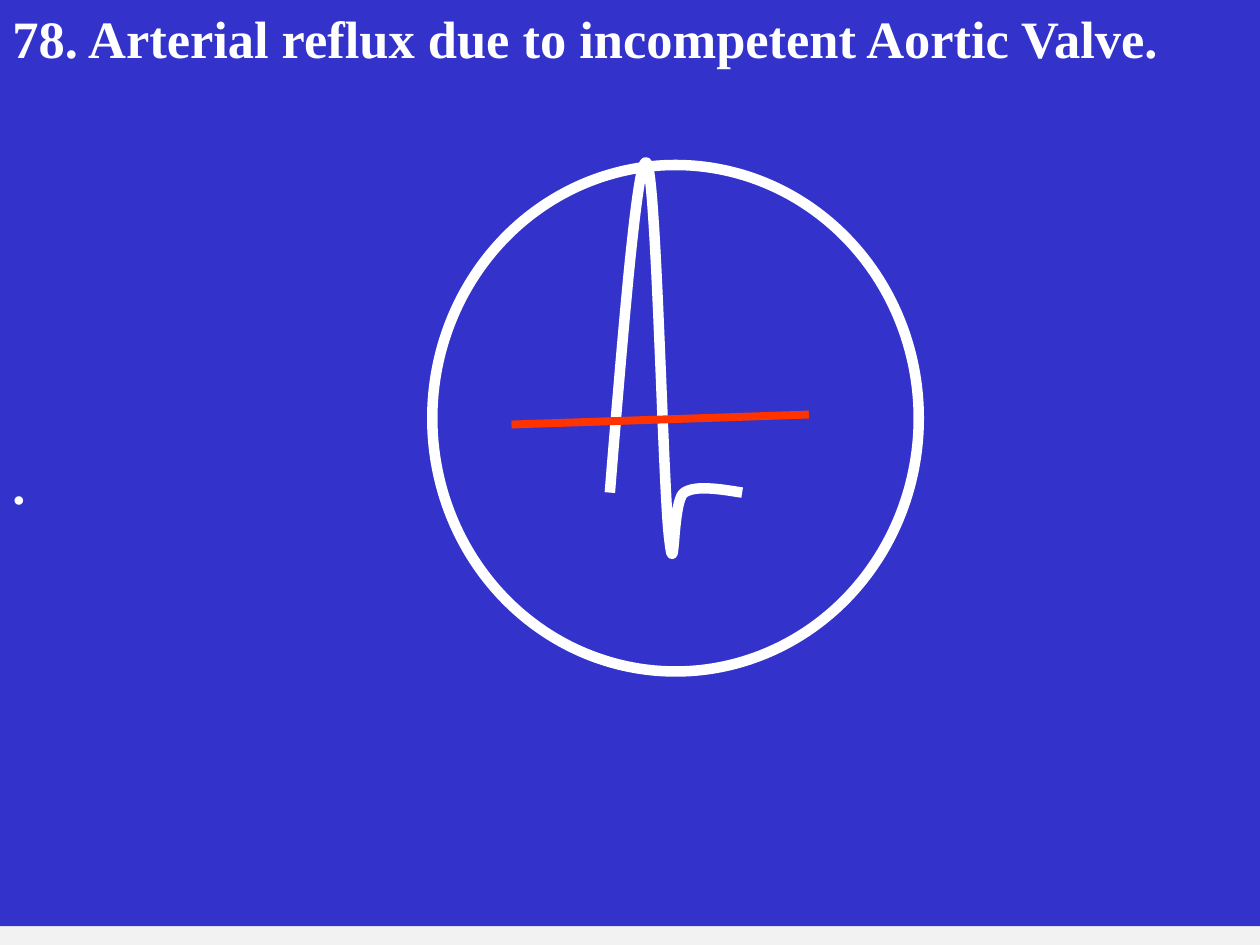
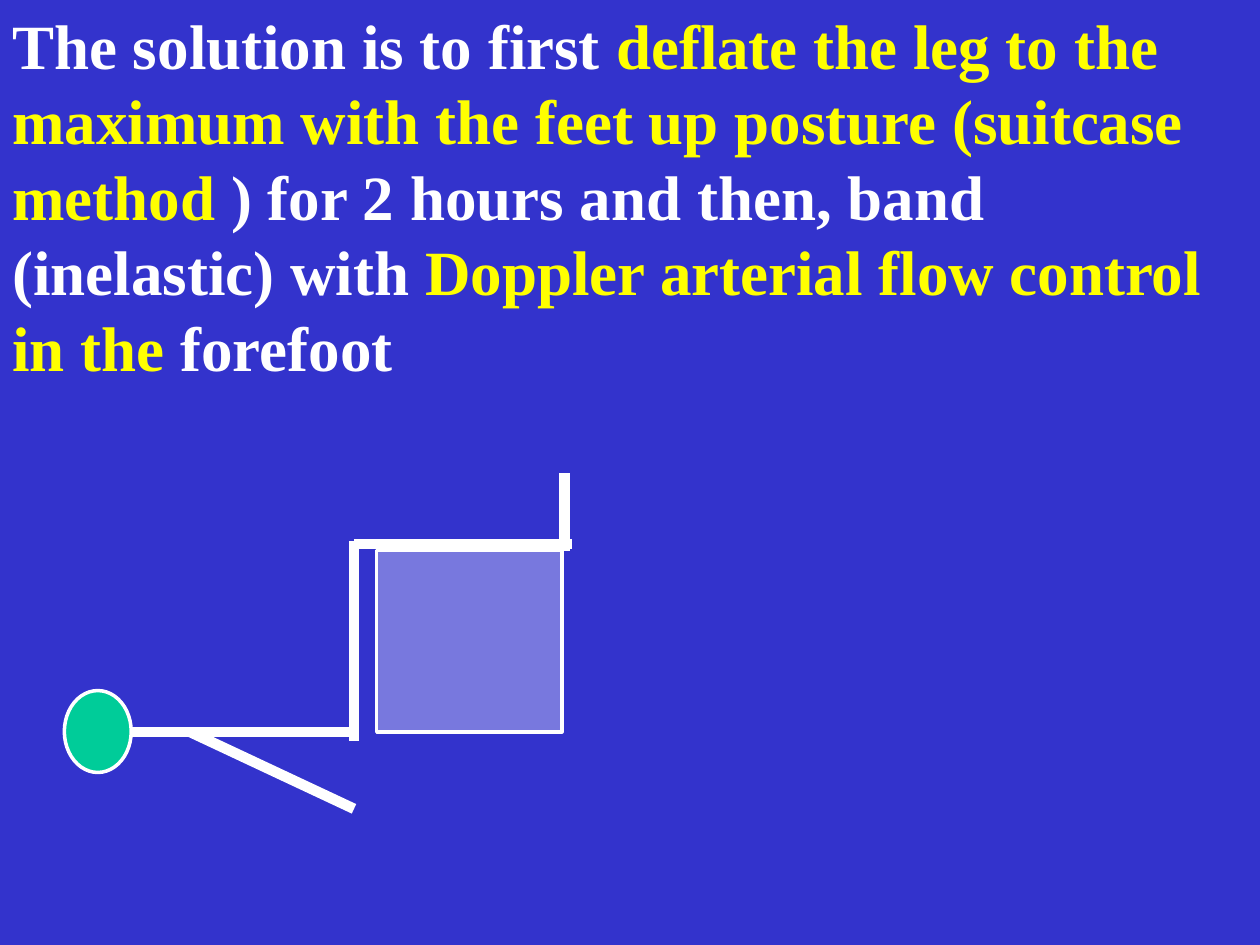
from dataclasses import dataclass

from lxml.etree import SubElement
from pptx import Presentation
from pptx.dml.color import RGBColor
from pptx.enum.shapes import MSO_CONNECTOR, MSO_SHAPE
from pptx.enum.text import MSO_ANCHOR, PP_ALIGN
from pptx.oxml.ns import qn
from pptx.util import Pt


@dataclass(frozen=True)
class Theme:
    """Colours, type and line widths shared by the slides."""

    page: str = "F2F2F2"
    panel: str = "3333CC"
    white: str = "FFFFFF"
    yellow: str = "FFFF00"
    red: str = "FF3300"
    head: str = "00CC99"
    seat: str = "7878DE"
    font: str = "Times New Roman"
    heading_size: int = 30
    body_size: int = 36
    leading: float = 1.2
    thick: float = 6
    medium: float = 4.5
    thin: float = 2


THEME = Theme()
WIDTH, HEIGHT = 720, 540


def rgb(colour):
    """Turn a hex string into a colour."""
    return RGBColor.from_string(colour)


def style_shape(shape, fill=None, line=None, width=THEME.thin):
    """Set the fill and outline of a shape and drop its shadow."""
    shape.shadow.inherit = False
    if fill:
        shape.fill.solid()
        shape.fill.fore_color.rgb = rgb(fill)
    else:
        shape.fill.background()
    if line:
        shape.line.color.rgb = rgb(line)
        shape.line.width = Pt(width)
    else:
        shape.line.fill.background()


def add_figure(slide, kind, box, **style):
    """Add a styled preset shape in a box of left, top, width, height."""
    figure = slide.shapes.add_shape(kind, *map(Pt, box))
    style_shape(figure, **style)
    return figure


def add_stroke(slide, start, end, colour=THEME.white, width=THEME.thick):
    """Add a straight line between two points."""
    stroke = slide.shapes.add_connector(
        MSO_CONNECTOR.STRAIGHT, *map(Pt, (*start, *end)))
    stroke.line.color.rgb = rgb(colour)
    stroke.line.width = Pt(width)
    SubElement(stroke._element.spPr, qn("a:effectLst"))


def add_curve(slide, start, segments, steps=24):
    """Draw a chain of cubic curves as one open outline."""
    points, origin = [], start
    for first, second, end in segments:
        for step in range(1, steps + 1):
            t = step / steps
            u = 1 - t
            points.append(tuple(
                Pt(u**3 * a + 3 * u * u * t * b + 3 * u * t * t * c + t**3 * d)
                for a, b, c, d in zip(origin, first, second, end)))
        origin = end
    builder = slide.shapes.build_freeform(*map(Pt, start))
    builder.add_line_segments(points, close=False)
    style_shape(builder.convert_to_shape(), line=THEME.white, width=THEME.thick)


def add_panel(slide, height, size, paragraphs):
    """Add the blue panel with paragraphs of (space before, runs)."""
    panel = add_figure(slide, MSO_SHAPE.RECTANGLE, (0, 0, WIDTH, height),
                       fill=THEME.panel)
    frame = panel.text_frame
    frame.word_wrap = True
    frame.vertical_anchor = MSO_ANCHOR.TOP
    for index, (space, runs) in enumerate(paragraphs):
        paragraph = frame.add_paragraph() if index else frame.paragraphs[0]
        paragraph.alignment = PP_ALIGN.LEFT
        paragraph.line_spacing = Pt(size * THEME.leading)
        paragraph.space_before = Pt(space)
        for text, colour in runs:
            run = paragraph.add_run()
            run.text = text
            run.font.name = THEME.font
            run.font.size = Pt(size)
            run.font.bold = True
            run.font.color.rgb = rgb(colour)


def add_page(deck):
    """Add a blank slide with the shared background."""
    slide = deck.slides.add_slide(deck.slide_layouts[6])
    slide.background.fill.solid()
    slide.background.fill.fore_color.rgb = rgb(THEME.page)
    return slide


def build_reflux(deck):
    """Build the arterial reflux slide with its Doppler trace."""
    slide = add_page(deck)
    add_panel(slide, 529.2, THEME.heading_size, [
        (0, [("78. Arterial reflux due to incompetent Aortic Valve.",
              THEME.white)]),
        (219, [(".", THEME.white)]),
    ])
    add_curve(slide, (348.5, 281.5), [
        ((356.4, 185), (364.3, 88.6), (369.4, 92.9)),
        ((375.1, 97.2), (378.7, 275), (382.3, 306.7)),
        ((385.9, 337.7), (383.8, 285.8), (391, 281.5)),
        ((397.4, 277.2), (411.1, 279.4), (424.1, 281.5)),
    ])
    add_stroke(slide, (292.3, 242.6), (462.2, 236.9), THEME.red, THEME.medium)
    add_figure(slide, MSO_SHAPE.OVAL, (247, 94.3, 278, 289.4),
               line=THEME.white, width=THEME.thick)


def build_posture(deck):
    """Build the feet up posture slide with its stick figure."""
    slide = add_page(deck)
    add_panel(slide, HEIGHT, THEME.body_size, [(0, [
        ("The solution is to first ", THEME.white),
        ("deflate the leg to the maximum with the feet up posture "
         "(suitcase method ", THEME.yellow),
        (") for 2 hours and then, band (inelastic) with ", THEME.white),
        ("Doppler arterial flow control in the ", THEME.yellow),
        ("forefoot", THEME.white),
    ])])
    add_figure(slide, MSO_SHAPE.OVAL, (36.8, 394.6, 38.2, 46.8),
               fill=THEME.head, line=THEME.white)
    hip_x, back_y, shin_y, foot_x = 202.3, 418.3, 311, 322.6
    trunk = (75.6, back_y), (hip_x, back_y)
    shin = (hip_x, shin_y), (326.9, shin_y)
    thigh = (hip_x, 423.4), (hip_x, 308.9)
    arm = (108.7, back_y), (hip_x, 462.2)
    foot = (foot_x, 314.6), (foot_x, 270)
    for start, end in (trunk, shin, thigh, arm, foot):
        add_stroke(slide, start, end)
    add_figure(slide, MSO_SHAPE.RECTANGLE, (215.3, 314.6, 105.8, 103.7),
               fill=THEME.seat, line=THEME.white)


def main():
    """Build and save the deck."""
    deck = Presentation()
    deck.slide_width, deck.slide_height = Pt(WIDTH), Pt(HEIGHT)
    build_reflux(deck)
    build_posture(deck)
    deck.save("out.pptx")


if __name__ == "__main__":
    main()
